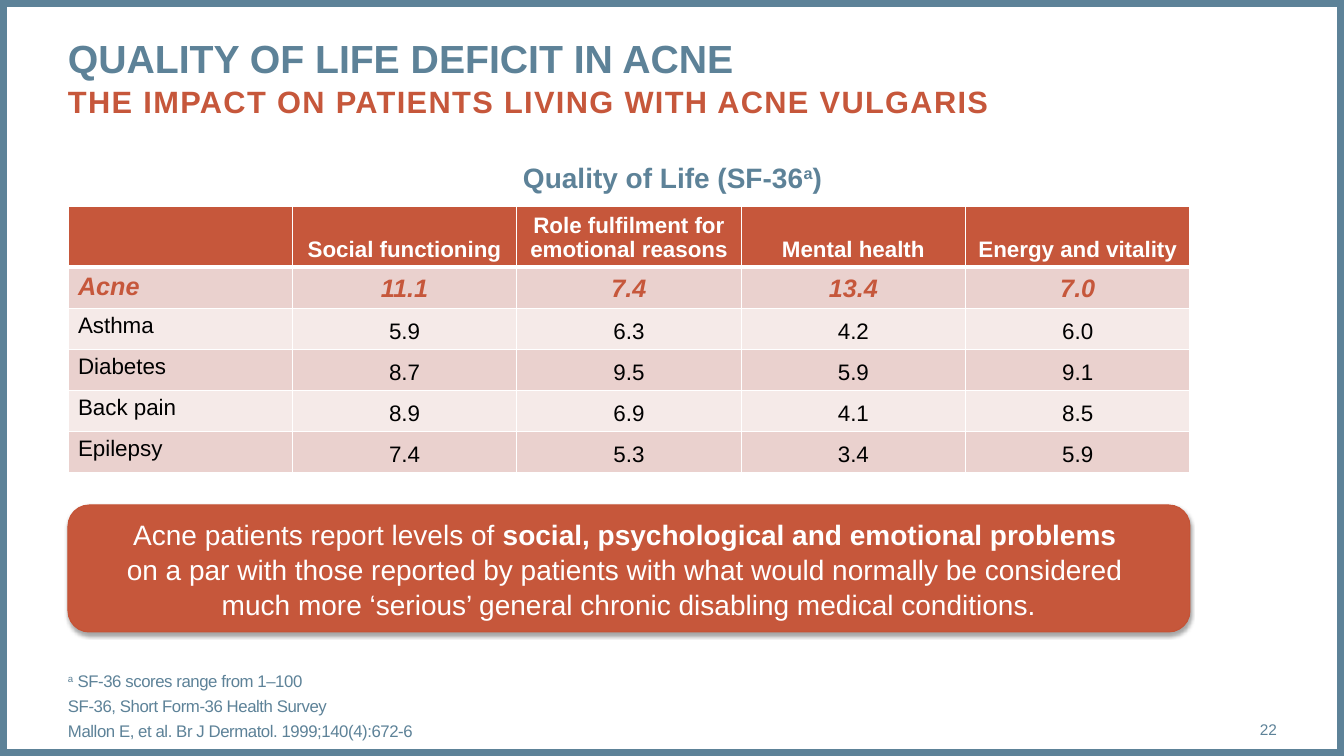
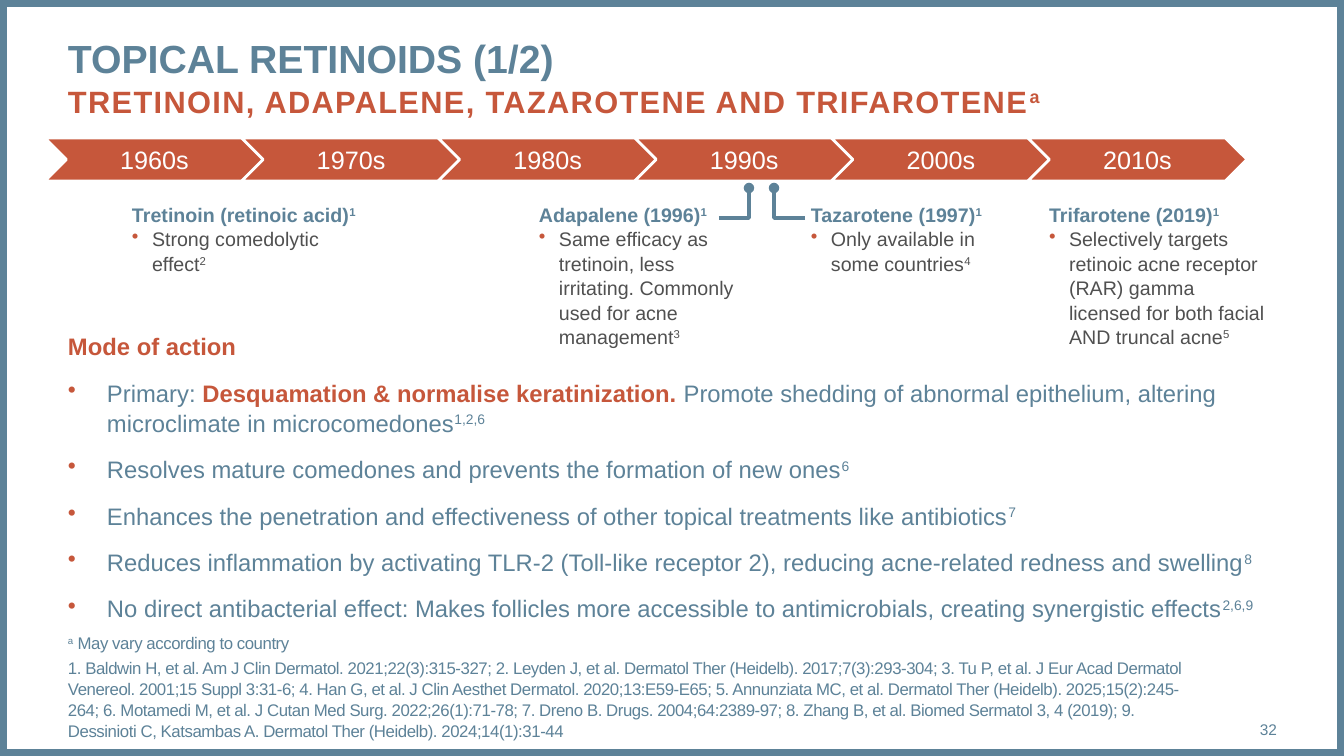
from lxml import etree
from pptx import Presentation
from pptx import util as u
from pptx.dml.color import RGBColor
from pptx.enum import shapes, text
from pptx.oxml.ns import qn

PX = 9071
WIDTH, HEIGHT = 1344, 756
MARGIN = 68
CONTENT_WIDTH = 1122
FONT = "Arial"
SLATE = RGBColor(0x5D, 0x82, 0x98)
RUST = RGBColor(0xC6, 0x57, 0x3B)
RUST_EDGE = RGBColor(0xC5, 0x53, 0x36)
ROSE = RGBColor(0xEA, 0xD1, 0xCE)
BLUSH = RGBColor(0xF5, 0xEA, 0xE8)
GREY = RGBColor(0x50, 0x50, 0x50)
BLACK = RGBColor(0, 0, 0)
WHITE = RGBColor(0xFF, 0xFF, 0xFF)
TOP, MIDDLE, BOTTOM = text.MSO_ANCHOR.TOP, text.MSO_ANCHOR.MIDDLE, text.MSO_ANCHOR.BOTTOM
LEFT, CENTER, RIGHT = text.PP_ALIGN.LEFT, text.PP_ALIGN.CENTER, text.PP_ALIGN.RIGHT


def add_box(page, left, top, width, height, anchor=TOP):
    box = page.shapes.add_textbox(left * PX, top * PX, width * PX, height * PX)
    frame = box.text_frame
    frame.word_wrap = True
    frame.vertical_anchor = anchor
    frame.margin_left = frame.margin_right = frame.margin_top = frame.margin_bottom = 0
    return frame


def write(frame, marked, size, color, bold=False, italic=False, align=LEFT,
          before=0, tracking=0, accent=None, indent=0, leading=1.04):
    first = not frame.text
    para = frame.paragraphs[0] if first else frame.add_paragraph()
    if indent:
        props = para._p.get_or_add_pPr()
        props.set("marL", str(indent * PX))
        props.set("indent", str(-indent * PX))
        bullet_color = etree.SubElement(props, qn("a:buClr"))
        etree.SubElement(bullet_color, qn("a:srgbClr"), val=str(RUST))
        etree.SubElement(props, qn("a:buChar"), char="•")
    para.alignment = align
    para.line_spacing = leading
    para.space_before = u.Pt(0 if first else before)
    para.font.name = FONT
    para.font.size = u.Pt(size)
    para.font.bold = bold
    para.font.italic = italic
    para.font.color.rgb = color
    for row, line in enumerate(marked.split("\n")):
        if row:
            para.add_line_break()
        for part, phrase in enumerate(line.split("|")):
            for piece, words in enumerate(phrase.split("^")):
                if not words:
                    continue
                span = para.add_run()
                span.text = words
                if part % 2:
                    span.font.bold = True
                    if accent is not None:
                        span.font.color.rgb = accent
                if piece % 2:
                    span._r.get_or_add_rPr().set("baseline", "30000")
                if tracking:
                    span._r.get_or_add_rPr().set("spc", str(tracking))


deck = Presentation()
deck.slide_width = WIDTH * PX
deck.slide_height = HEIGHT * PX

outlines = [
    ("QUALITY OF LIFE DEFICIT IN ACNE",
     "THE IMPACT ON PATIENTS LIVING WITH ACNE VULGARIS",
     "22",
     ["^a^ SF-36 scores range from 1–100",
      "SF-36, Short Form-36 Health Survey",
      "Mallon E, et al. Br J Dermatol. 1999;140(4):672-6"]),
    ("TOPICAL RETINOIDS (1/2)",
     "TRETINOIN, ADAPALENE, TAZAROTENE AND TRIFAROTENE^a",
     "32",
     ["^a^ May vary according to country",
      "1. Baldwin H, et al. Am J Clin Dermatol. 2021;22(3):315-327; "
      "2. Leyden J, et al. Dermatol Ther (Heidelb). 2017;7(3):293-304; "
      "3. Tu P, et al. J Eur Acad Dermatol Venereol. 2001;15 Suppl 3:31-6; "
      "4. Han G, et al. J Clin Aesthet Dermatol. 2020;13:E59-E65; "
      "5. Annunziata MC, et al. Dermatol Ther (Heidelb). 2025;15(2):245-264; "
      "6. Motamedi M, et al. J Cutan Med Surg. 2022;26(1):71-78; "
      "7. Dreno B. Drugs. 2004;64:2389-97; "
      "8. Zhang B, et al. Biomed Sermatol 3, 4 (2019); "
      "9. Dessinioti C, Katsambas A. Dermatol Ther (Heidelb). 2024;14(1):31-44"]),
]

pages = []
for title, subtitle, number, notes in outlines:
    page = deck.slides.add_slide(deck.slide_layouts[6])
    pages.append(page)
    border = page.shapes.add_shape(shapes.MSO_SHAPE.RECTANGLE, 0, 0, WIDTH * PX, HEIGHT * PX)
    border.shadow.inherit = False
    border.fill.background()
    border.line.color.rgb = SLATE
    border.line.width = u.Pt(10)
    heading = add_box(page, MARGIN, 32, 1209, 90)
    write(heading, title, 28, SLATE, bold=True)
    write(heading, subtitle, 22, RUST, bold=True, tracking=100)
    write(add_box(page, 1190, 709, 87, 40, MIDDLE), number, 11, SLATE, align=RIGHT)
    footnotes = add_box(page, MARGIN, 701, CONTENT_WIDTH, 40, BOTTOM)
    for note in notes:
        write(footnotes, note, 12, SLATE, before=3, tracking=-30)

quality, retinoids = pages

write(add_box(quality, MARGIN, 159, 1209, 40), "Quality of Life (SF-36^a^)", 20, SLATE,
      bold=True, align=CENTER)

scores = [
    ["", "Social functioning", "Role fulfilment for emotional reasons", "Mental health",
     "Energy and vitality"],
    ["Acne", "11.1", "7.4", "13.4", "7.0"],
    ["Asthma", "5.9", "6.3", "4.2", "6.0"],
    ["Diabetes", "8.7", "9.5", "5.9", "9.1"],
    ["Back pain", "8.9", "6.9", "4.1", "8.5"],
    ["Epilepsy", "7.4", "5.3", "3.4", "5.9"],
]
row_heights = [59] + [41] * 5
table = quality.shapes.add_table(len(scores), len(scores[0]), MARGIN * PX, 206 * PX,
                                 CONTENT_WIDTH * PX, sum(row_heights) * PX).table
table.first_row = False
table.horz_banding = False
for column in table.columns:
    column.width = CONTENT_WIDTH * PX // len(scores[0])
for row, values in enumerate(scores):
    table.rows[row].height = row_heights[row] * PX
    for col, value in enumerate(values):
        cell = table.cell(row, col)
        props = cell._tc.get_or_add_tcPr()
        for side in ("L", "R", "T", "B"):
            heavy = (row == 0 and side == "B") or (row == 1 and side == "T")
            edge = etree.SubElement(props, qn("a:ln" + side), w=str(u.Pt(3 if heavy else 1)))
            paint = etree.SubElement(edge, qn("a:solidFill"))
            etree.SubElement(paint, qn("a:srgbClr"), val=str(WHITE))
        cell.fill.solid()
        cell.fill.fore_color.rgb = RUST if row == 0 else ROSE if row % 2 else BLUSH
        cell.vertical_anchor = BOTTOM if row == 0 or col else TOP
        if value:
            write(cell.text_frame, value, 18 if row == 1 else 16,
                  [WHITE, RUST][row] if row < 2 else BLACK, bold=row < 2, italic=row == 1,
                  align=CENTER if col else LEFT, leading=0.95 if row == 0 else 1.0)

callout = quality.shapes.add_shape(shapes.MSO_SHAPE.ROUNDED_RECTANGLE, MARGIN * PX, 505 * PX,
                                   CONTENT_WIDTH * PX, 127 * PX)
callout.fill.solid()
callout.fill.fore_color.rgb = RUST
callout.line.color.rgb = RUST_EDGE
callout.line.width = u.Pt(0.75)
callout.shadow.inherit = False
effects = callout._element.spPr.find(qn("a:effectLst"))
shade = etree.SubElement(effects, qn("a:outerShdw"), blurRad=str(u.Pt(3.1)), dist=str(u.Pt(1.8)),
                         dir="5400000", rotWithShape="0")
shade_color = etree.SubElement(shade, qn("a:srgbClr"), val=str(BLACK))
etree.SubElement(shade_color, qn("a:alpha"), val="35000")
callout.text_frame.word_wrap = True
callout.text_frame.vertical_anchor = MIDDLE
write(callout.text_frame,
      "Acne patients report levels of |social, psychological and emotional problems |\n"
      "on a par with those reported by patients with what would normally be considered \n"
      "much more ‘serious’ general chronic disabling medical conditions.",
      20, WHITE, align=CENTER)

mechanism = add_box(retinoids, MARGIN, 331, 1209, 293)
write(mechanism, "Mode of action", 17, RUST, bold=True)
for action in [
    "Primary: |Desquamation & normalise keratinization. |Promote shedding of abnormal "
    "epithelium, altering microclimate in microcomedones^1,2,6",
    "Resolves mature comedones and prevents the formation of new ones^6",
    "Enhances the penetration and effectiveness of other topical treatments like antibiotics^7",
    "Reduces inflammation by activating TLR-2 (Toll-like receptor 2), reducing acne-related "
    "redness and swelling^8",
    "No direct antibacterial effect: Makes follicles more accessible to antimicrobials, "
    "creating synergistic effects^2,6,9",
]:
    write(mechanism, action, 17, SLATE, before=12, accent=RUST, indent=39)

decades = ["1960s", "1970s", "1980s", "1990s", "2000s", "2010s"]
first_left, last_left = 45, 1028
for index, decade in enumerate(decades):
    left = first_left * PX + index * (last_left - first_left) * PX // (len(decades) - 1)
    chevron = retinoids.shapes.add_shape(shapes.MSO_SHAPE.CHEVRON, left, 138 * PX,
                                         219 * PX, 43 * PX)
    chevron.shadow.inherit = False
    chevron.fill.solid()
    chevron.fill.fore_color.rgb = RUST
    chevron.line.color.rgb = WHITE
    chevron.line.width = u.Pt(2)
    chevron.text_frame.vertical_anchor = MIDDLE
    write(chevron.text_frame, decade, 18, WHITE, align=CENTER, leading=1.0)

for left, width, height, drug, remark in [
    (132, 230, 72, "Tretinoin (retinoic acid)^1", "Strong comedolytic effect^2"),
    (539, 199, 142, "Adapalene (1996)^1",
     "Same efficacy as tretinoin, less irritating. Commonly used for acne management^3"),
    (811, 199, 72, "Tazarotene (1997)^1", "Only available in some countries^4"),
    (1049, 218, 142, "Trifarotene (2019)^1",
     "Selectively targets retinoic acne receptor (RAR) gamma licensed for both facial "
     "AND truncal acne^5"),
]:
    entry = add_box(retinoids, left, 202, width, height)
    write(entry, drug, 14, SLATE, bold=True)
    write(entry, remark, 14, GREY, indent=20)

for label_x, decade_x in [(719, 749), (805, 774)]:
    builder = retinoids.shapes.build_freeform(label_x, 218, PX)
    builder.add_line_segments([(decade_x, 218), (decade_x, 188)], close=False)
    pointer = builder.convert_to_shape()
    pointer.shadow.inherit = False
    pointer.fill.background()
    pointer.line.color.rgb = SLATE
    pointer.line.width = u.Pt(2.5)
    etree.SubElement(pointer.line._get_or_add_ln(), qn("a:tailEnd"), type="oval")

deck.save("out.pptx")
